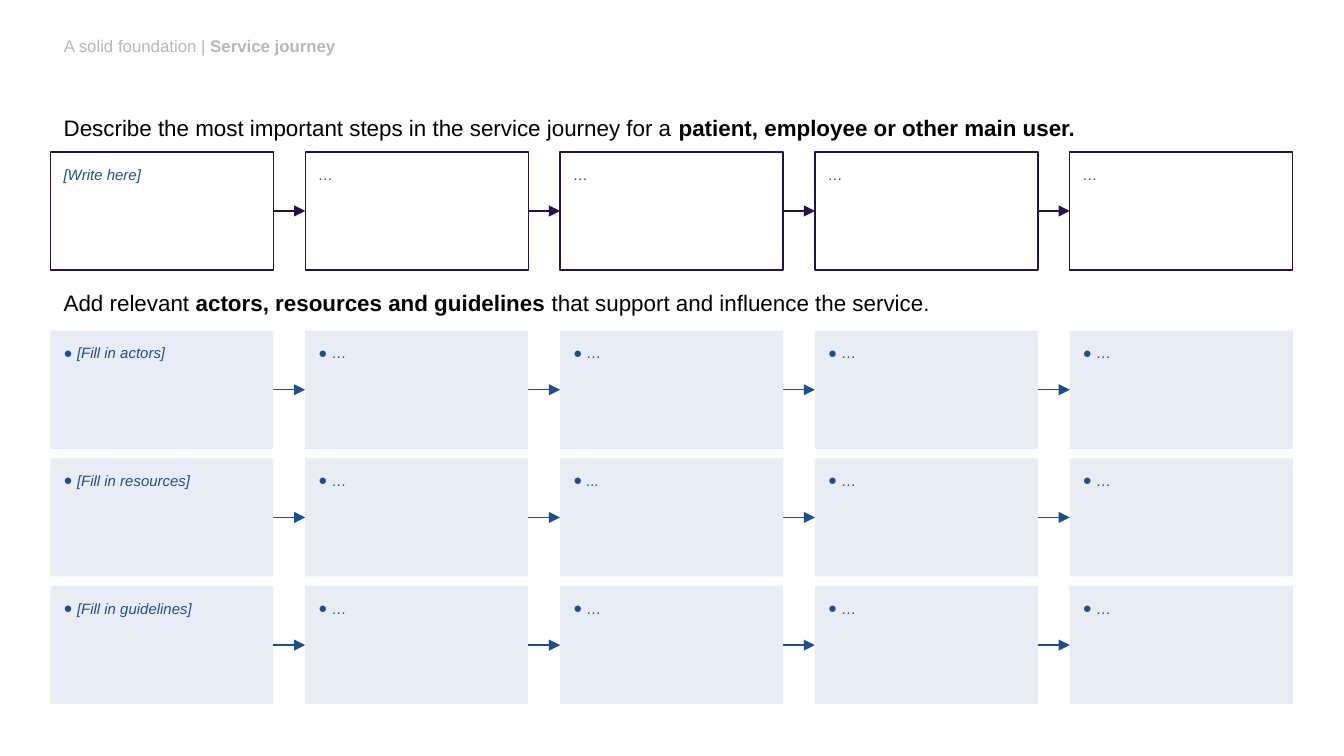
"""Build the service journey worksheet slide."""
from dataclasses import dataclass

from lxml import etree
from pptx import Presentation
from pptx.dml.color import RGBColor
from pptx.enum import shapes, text
from pptx.oxml import ns
from pptx.util import Inches, Pt


@dataclass(frozen=True)
class Theme:
    font: str = "Arial"
    header: str = "B7B7B7"
    prompt: str = "000000"
    journey: str = "25114F"
    support: str = "1F4D8E"
    panel: str = "E8EDF5"
    header_size: float = 9
    prompt_size: float = 12
    entry_size: float = 8
    line_width: float = 0.75


theme = Theme()


def write(frame, parts, size, color, anchor, italic=False):
    frame.word_wrap = True
    frame.auto_size = text.MSO_AUTO_SIZE.NONE
    frame.vertical_anchor = anchor
    frame.margin_left = frame.margin_right = Inches(0.1)
    frame.margin_top = frame.margin_bottom = Inches(0.1)
    paragraph = frame.paragraphs[0]
    paragraph.alignment = text.PP_ALIGN.LEFT
    for words, bold in parts:
        run = paragraph.add_run()
        run.text = words
        run.font.name = theme.font
        run.font.size = Pt(size)
        run.font.bold = bold
        run.font.italic = italic
        run.font.color.rgb = RGBColor.from_string(color)


def add_bullet(paragraph, color):
    properties = paragraph._p.get_or_add_pPr()
    properties.set("marL", str(Inches(0.1)))
    properties.set("indent", str(Inches(-0.11)))
    bullet_color = etree.SubElement(properties, ns.qn("a:buClr"))
    etree.SubElement(bullet_color, ns.qn("a:srgbClr"), val=color)
    etree.SubElement(properties, ns.qn("a:buFont"), typeface=theme.font)
    etree.SubElement(properties, ns.qn("a:buChar"), char="●")


deck = Presentation()
deck.slide_width = Inches(10)
deck.slide_height = Inches(10 * 9 / 16)
slide = deck.slides.add_slide(deck.slide_layouts[5])

first_left, last_left, steps = 3 / 8, 7.96, 5
pitch = (last_left - first_left) / (steps - 1)

header = slide.shapes.title
header.left, header.top = Inches(first_left), Inches(0.23)
header.width, header.height = Inches(4.37), Inches(0.22)
write(header.text_frame, [("A solid foundation | ", False), ("Service journey", True)],
      theme.header_size, theme.header, text.MSO_ANCHOR.MIDDLE)

prompts = [
    (0.84, [("Describe the most important steps in the service journey for a ", False),
            ("patient, employee or other main user.", True)]),
    (2.14, [("Add relevant ", False),
            ("actors, resources and guidelines ", True),
            ("that support and influence the service.", False)]),
]
for top, parts in prompts:
    prompt = slide.shapes.add_textbox(
        Inches(first_left), Inches(top), Inches(9.25), Inches(0.22))
    write(prompt.text_frame, parts, theme.prompt_size, theme.prompt, text.MSO_ANCHOR.MIDDLE)

rows = [
    (1.13, theme.journey, False, ["[Write here]", "…", "…", "…", "…"]),
    (2.46, theme.support, True, ["[Fill in actors]", "…", "…", "…", "…"]),
    (3.41, theme.support, True, ["[Fill in resources]", "…", "...", "…", "…"]),
    (4.36, theme.support, True, ["[Fill in guidelines]", "…", "…", "…", "…"]),
]
for top, arrow_color, is_support, entries in rows:
    previous_step = None
    for column, entry in enumerate(entries):
        step = slide.shapes.add_shape(
            shapes.MSO_SHAPE.RECTANGLE, Inches(first_left + column * pitch), Inches(top),
            Inches(1.66), Inches(0.88))
        step.shadow.inherit = False
        write(step.text_frame, [(entry, False)], theme.entry_size, theme.support,
              text.MSO_ANCHOR.TOP, italic=True)
        if is_support:
            step.fill.solid()
            step.fill.fore_color.rgb = RGBColor.from_string(theme.panel)
            step.line.fill.background()
            add_bullet(step.text_frame.paragraphs[0], theme.support)
        else:
            step.fill.background()
            step.line.color.rgb = RGBColor.from_string(theme.journey)
            step.line.width = Pt(theme.line_width)

        if previous_step is not None:
            arrow = slide.shapes.add_connector(shapes.MSO_CONNECTOR.STRAIGHT, 0, 0, 0, 0)
            arrow.begin_connect(previous_step, 3)
            arrow.end_connect(step, 1)
            arrow.line.color.rgb = RGBColor.from_string(arrow_color)
            arrow.line.width = Pt(theme.line_width)
            etree.SubElement(arrow.line._get_or_add_ln(), ns.qn("a:tailEnd"), type="triangle")
            etree.SubElement(arrow._element.spPr, ns.qn("a:effectLst"))
        previous_step = step

deck.save("out.pptx")
